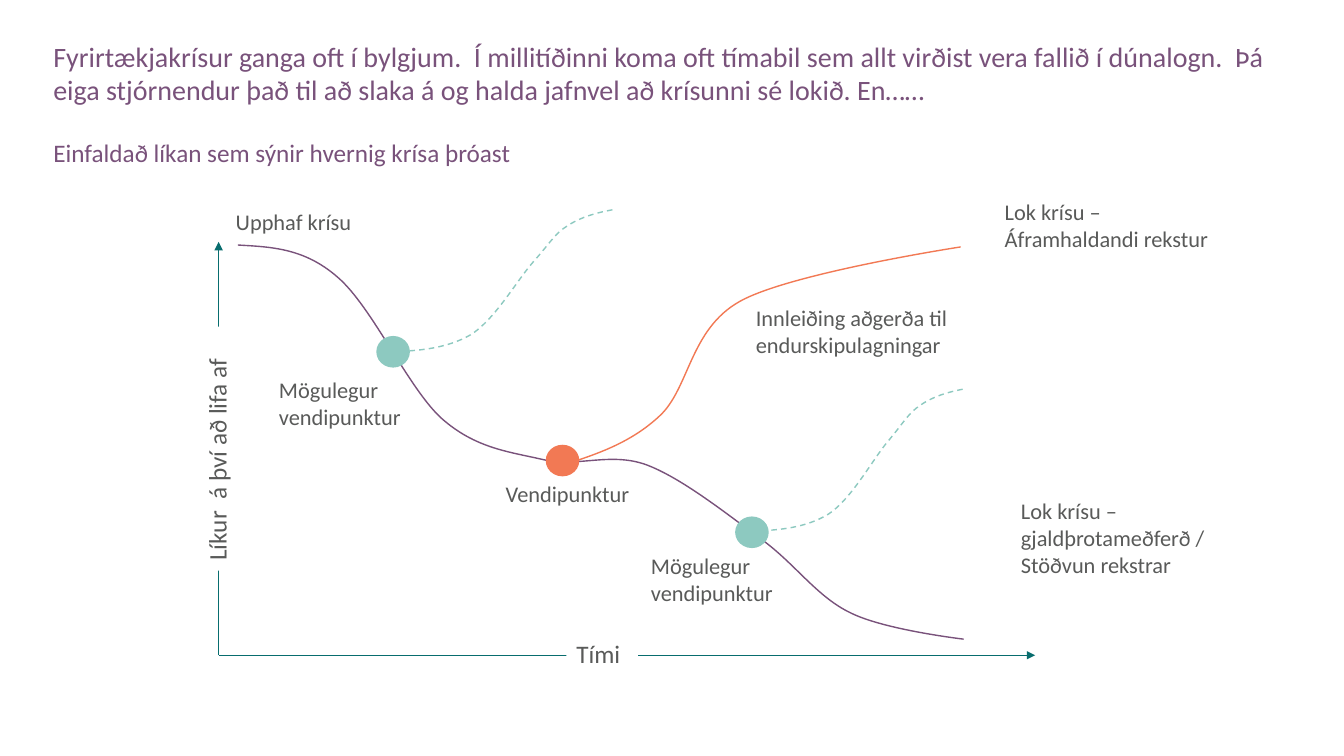
"""Build a slide with a simplified model of how a company crisis develops."""
from lxml import etree
from pptx import Presentation
from pptx import util as u
from pptx.dml.color import RGBColor
from pptx.enum import dml, shapes, text
from pptx.oxml.ns import qn

PURPLE = RGBColor(0x79, 0x52, 0x7B)
TEAL = RGBColor(0x08, 0x6D, 0x6E)
MINT = RGBColor(0x8D, 0xC9, 0xC0)
ORANGE = RGBColor(0xF2, 0x79, 0x54)
GREY = RGBColor(0x59, 0x5A, 0x59)
WHITE = RGBColor(0xFF, 0xFF, 0xFF)
FONT = "Calibri"

HEADINGS = [
    ("Fyrirtækjakrísur ganga oft í bylgjum.  Í millitíðinni koma oft tímabil sem allt "
     "virðist vera fallið í dúnalogn.  Þá eiga stjórnendur það til að slaka á og halda "
     "jafnvel að krísunni sé lokið. En……", (31, 24.5, 903, 67), 20, 1.0),
    ("Einfaldað líkan sem sýnir hvernig krísa þróast", (31, 97.2, 903, 23.8), 18, 0.9),
]
ORIGIN = (156.2, 468)
AXIS_ENDS = [(156.2, 172.8), (739.4, 468)]
AXIS_TITLES = [
    ("Tími", (404.6, 452.2, 51.1, 28.8), 0),
    ("Líkur  á því að lifa af", (67.7, 306, 174.2, 28.8), 270),
]
LABELS = [
    ("Upphaf krísu", (161.3, 145.4, 185.8, 26.6)),
    ("Mögulegur vendipunktur", (192.2, 265, 122.4, 46)),
    ("Vendipunktur", (354.2, 339.1, 124.6, 26.6)),
    ("Mögulegur vendipunktur", (457.9, 391, 108, 46)),
    ("Innleiðing aðgerða til endurskipulagningar", (532.8, 213.8, 167, 46)),
    ("Lok krísu –\nÁframhaldandi rekstur", (710.6, 138.2, 194.4, 46)),
    ("Lok krísu –\ngjaldþrotameðferð /\nStöðvun rekstrar", (722.2, 351.4, 177.1, 85)),
]
DECLINE = [
    (169.9, 175), (193.7, 176.4), (217.4, 177.1), (241.2, 198),
    (265.7, 218.9), (291.6, 277.2), (315.4, 298.8),
    (339.8, 320.4), (363.6, 322.6), (388.1, 328.3),
    (411.8, 334.1), (435.6, 322.6), (461.5, 331.9),
    (486.7, 341.3), (518.4, 366.5), (542.9, 384.5),
    (567.4, 401.8), (583.2, 426.2), (607.7, 437.8),
    (632.2, 450), (688.3, 456.5), (688.3, 456.5),
]
RECOVERY = [
    (401, 332.6), (425.5, 324.7), (450, 316.8), (470.9, 297.4),
    (492.5, 277.9), (492.5, 235.4), (528.5, 215.3),
    (564.5, 195.1), (686.2, 176.4), (686.2, 176.4),
]
RISE = [
    (0, 0), (20.2, -0.7), (40.3, -2.2), (57.6, -12.2),
    (74.9, -23), (90.7, -51.1), (102.2, -64.1),
    (113.8, -77), (117.4, -84.2), (126.7, -90),
    (136.8, -96.5), (147.6, -99.4), (159.1, -101.5),
]
RISE_STARTS = [(537.1, 379.4, 0.95), (278.6, 251.3, 1)]
DOT_SIZE = (23, 21.6)
DOTS = [((280.8, 251.3), MINT), ((401.8, 329), ORANGE), ((537.1, 380.2), MINT)]


def pts(values):
    return [u.Pt(v) for v in values]


def put_text(sp, content, size=16, color=GREY, spacing=1.0, grow=True):
    tf = sp.text_frame
    tf.word_wrap = True
    tf.vertical_anchor = text.MSO_ANCHOR.TOP
    if grow:
        tf.auto_size = text.MSO_AUTO_SIZE.SHAPE_TO_FIT_TEXT
    p = tf.paragraphs[0]
    p.alignment = text.PP_ALIGN.LEFT
    p.line_spacing = spacing
    for i, line in enumerate(content.split("\n")):
        if i:
            p.add_line_break()
        r = p.add_run()
        r.text = line
        r.font.name = FONT
        r.font.size = u.Pt(size)
        r.font.color.rgb = color


def add_axis(s, end):
    line = s.shapes.add_connector(shapes.MSO_CONNECTOR.STRAIGHT, *pts(ORIGIN + end))
    line.line.color.rgb = TEAL
    line.line.width = u.Pt(0.75)
    etree.SubElement(line.line._get_or_add_ln(), qn("a:tailEnd"), type="triangle")
    etree.SubElement(line._element.spPr, qn("a:effectLst"))


def add_curve(s, points, color, dashed=False):
    points = [tuple(pts(pt)) for pt in points]
    anchors = points[::3]
    builder = s.shapes.build_freeform(*anchors[0])
    builder.add_line_segments(anchors[1:], close=False)
    sp = builder.convert_to_shape()
    left, top = sp.left, sp.top
    segments = list(sp._element.iter(qn("a:lnTo")))
    for i, seg in enumerate(segments):
        seg.tag = qn("a:cubicBezTo")
        for j, (x, y) in enumerate(points[3 * i + 1:3 * i + 3]):
            seg.insert(j, etree.Element(qn("a:pt"), x=str(x - left), y=str(y - top)))
    sp.shadow.inherit = False
    sp.fill.background()
    sp.line.color.rgb = color
    sp.line.width = u.Pt(1)
    if dashed:
        sp.line.dash_style = dml.MSO_LINE.DASH


def add_filled(s, kind, box, color):
    sp = s.shapes.add_shape(kind, *pts(box))
    sp.shadow.inherit = False
    sp.fill.solid()
    sp.fill.fore_color.rgb = color
    sp.line.color.rgb = color
    sp.line.width = u.Pt(1)
    return sp


def main():
    prs = Presentation()
    prs.slide_width, prs.slide_height = u.Pt(960), u.Pt(540)
    s = prs.slides.add_slide(prs.slide_layouts[6])

    for content, box, size, spacing in HEADINGS:
        put_text(s.shapes.add_textbox(*pts(box)), content, size=size,
                 color=PURPLE, spacing=spacing, grow=False)
    for end in AXIS_ENDS:
        add_axis(s, end)
    for content, box, angle in AXIS_TITLES:
        sp = add_filled(s, shapes.MSO_SHAPE.RECTANGLE, box, WHITE)
        sp.line.fill.background()
        sp.rotation = angle
        put_text(sp, content, size=18)

    add_curve(s, DECLINE, PURPLE)
    add_curve(s, RECOVERY, ORANGE)
    for x, y, stretch in RISE_STARTS:
        add_curve(s, [(x + dx * stretch, y + dy) for dx, dy in RISE], MINT, dashed=True)
    w, h = DOT_SIZE
    for (x, y), color in DOTS:
        add_filled(s, shapes.MSO_SHAPE.OVAL, (x - w / 2, y - h / 2, w, h), color)
    for content, box in LABELS:
        put_text(s.shapes.add_textbox(*pts(box)), content)

    prs.save("out.pptx")


if __name__ == "__main__":
    main()
